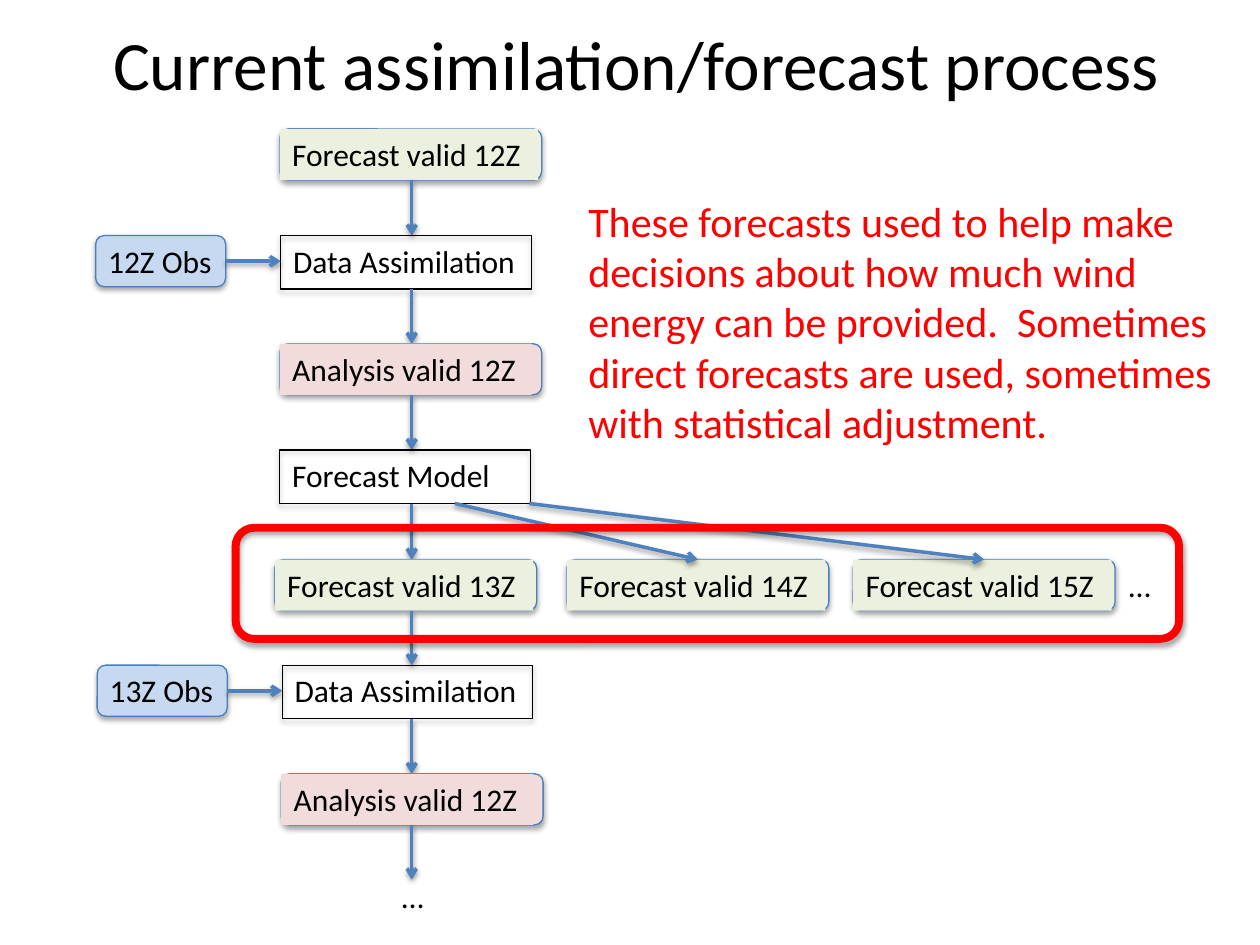
from collections import namedtuple
from dataclasses import dataclass

from lxml.etree import SubElement
from pptx import Presentation
from pptx.dml.color import RGBColor
from pptx.enum.shapes import MSO_CONNECTOR, MSO_SHAPE
from pptx.enum.text import MSO_ANCHOR, PP_ALIGN
from pptx.oxml.ns import qn
from pptx.util import Cm, Pt

# Boxes are in centimetres
Box = namedtuple("Box", "left top width height")


@dataclass(frozen=True)
class Theme:
    font: str = "Calibri"
    title_size: float = 39.6
    note_size: float = 24
    label_size: float = 18
    ink: str = "000000"
    alert: str = "FF0000"
    arrow: str = "4F81BD"
    edge: str = "4B7EBC"
    observation: str = "C6D9F1"
    forecast: str = "EBF1DE"
    analysis: str = "F2DCDB"


THEME = Theme()
ROW = 1.03
PROCESS_HEIGHT = 1.08
PROCESS_WIDTH = 5.05
CARD_WIDTH = 5.28
CARD_LABEL_WIDTHS = {THEME.forecast: 5.21, THEME.analysis: 5.08, THEME.observation: 2.62}


def lengths(box):
    return [Cm(value) for value in box]


def add_shadow(shape, opacity, distance):
    effects = shape._element.spPr.find(qn("a:effectLst"))
    if effects is None:
        effects = SubElement(shape._element.spPr, qn("a:effectLst"))
    shadow = SubElement(effects, qn("a:outerShdw"), blurRad=str(Pt(3.1)),
                        dist=str(Pt(distance)), dir="5400000", rotWithShape="0")
    color = SubElement(shadow, qn("a:srgbClr"), val=THEME.ink)
    SubElement(color, qn("a:alpha"), val=str(opacity * 1000))


def add_panel(shapes, kind, box, line=None, weight=0.75, fill=None):
    panel = shapes.add_shape(kind, *lengths(box))
    panel.shadow.inherit = False
    if fill:
        panel.fill.solid()
        panel.fill.fore_color.rgb = RGBColor.from_string(fill)
    else:
        panel.fill.background()
    if line:
        panel.line.color.rgb = RGBColor.from_string(line)
        panel.line.width = Pt(weight)
        add_shadow(panel, 35, 1.8)
    else:
        panel.line.fill.background()
    return panel


def write(shape, lines, size=THEME.label_size, color=THEME.ink,
          align=PP_ALIGN.LEFT, anchor=MSO_ANCHOR.TOP):
    frame = shape.text_frame
    frame.word_wrap = True
    frame.margin_right = 0
    frame.vertical_anchor = anchor
    frame.text = "\n".join(lines)
    for para in frame.paragraphs:
        para.alignment = align
        para.font.name = THEME.font
        para.font.size = Pt(size)
        para.font.color.rgb = RGBColor.from_string(color)


def add_label(page, box, *lines, **style):
    write(page.shapes.add_textbox(*lengths(box)), lines, **style)


def add_arrow(page, start, end):
    arrow = page.shapes.add_connector(MSO_CONNECTOR.STRAIGHT, *lengths(start + end))
    arrow.line.color.rgb = RGBColor.from_string(THEME.arrow)
    arrow.line.width = Pt(2)
    SubElement(arrow.line._get_or_add_ln(), qn("a:tailEnd"), type="arrow")
    add_shadow(arrow, 38, 1.6)


def add_card(page, box, text, fill):
    """Rounded card with a square label panel laid over it."""
    group = page.shapes.add_group_shape()
    add_panel(group.shapes, MSO_SHAPE.ROUNDED_RECTANGLE, box, THEME.edge, fill=fill)
    label_fill = None if fill == THEME.observation else fill
    label_box = box._replace(width=CARD_LABEL_WIDTHS[fill])
    write(add_panel(group.shapes, MSO_SHAPE.RECTANGLE, label_box, fill=label_fill), [text])


def add_process(page, box, text):
    add_panel(page.shapes, MSO_SHAPE.RECTANGLE, box, THEME.ink)
    add_label(page, box._replace(height=ROW), text)


def add_title(page, box):
    add_label(page, box, "Current assimilation/forecast process", size=THEME.title_size,
              align=PP_ALIGN.CENTER, anchor=MSO_ANCHOR.MIDDLE)


def add_chain(page, box):
    """Main column of steps, with observations feeding in from the left."""
    # Offset from the column's left and top, text, card fill, observation
    steps = [
        (0.1, 0, "Forecast valid 12Z", THEME.forecast, None),
        (0.12, 2.15, "Data Assimilation", None, "12Z Obs"),
        (0.1, 4.33, "Analysis valid 12Z", THEME.analysis, None),
        (0.1, 6.47, "Forecast Model", None, None),
        (0, 8.68, "Forecast valid 13Z", THEME.forecast, None),
        (0.15, 10.81, "Data Assimilation", None, "13Z Obs"),
        (0.13, 13, "Analysis valid 12Z", THEME.analysis, None),
    ]
    tops = [box.top + step[1] for step in steps] + [box.top + 15.13]
    axis = box.left + 2.76
    for (inset, _, text, fill, observation), top, next_top in zip(steps, tops, tops[1:]):
        left = box.left + inset
        if fill:
            height = ROW
            add_card(page, Box(left, top, CARD_WIDTH, height), text, fill)
        else:
            height = PROCESS_HEIGHT
            add_process(page, Box(left, top, PROCESS_WIDTH, height), text)
        if observation:
            card = Box(left - 3.73, top, 2.62, ROW)
            add_card(page, card, observation, THEME.observation)
            middle = top + ROW / 2
            add_arrow(page, (card.left + card.width, middle), (left, middle))
        add_arrow(page, (axis, top + height), (axis, next_top))
    add_label(page, Box(axis - 0.45, tops[-1] - 0.18, 0.97, ROW), "…")


def add_outputs(page, box):
    """Later forecasts, their arrows from the model, and the red frame."""
    card_top = box.top + 0.64
    model_bottom = card_top - 1.13
    outputs = [(6.68, 4.42, "Forecast valid 14Z"), (12.45, 5.92, "Forecast valid 15Z")]
    for offset, start, text in outputs:
        card = Box(box.left + offset, card_top, CARD_WIDTH, ROW)
        add_card(page, card, text, THEME.forecast)
        add_arrow(page, (box.left + start, model_bottom),
                  (card.left + CARD_WIDTH / 2, card_top))
    add_label(page, Box(card.left + CARD_WIDTH + 0.03, card_top, 0.97, ROW), "…")
    add_panel(page.shapes, MSO_SHAPE.ROUNDED_RECTANGLE, box, THEME.alert, 4.5)


def add_note(page, box):
    add_label(page, box,
              "These forecasts used to help make",
              "decisions about how much wind",
              "energy can be provided.  Sometimes",
              "direct forecasts are used, sometimes",
              "with statistical adjustment.",
              size=THEME.note_size, color=THEME.alert)


def main():
    deck = Presentation()
    deck.slide_width, deck.slide_height = Cm(25.4), Cm(19.05)
    page = deck.slides.add_slide(deck.slide_layouts[6])
    add_title(page, Box(1.27, 0.23, 22.86, 2.06))
    add_chain(page, Box(5.54, 2.6, 5.41, 16))
    add_outputs(page, Box(4.75, 10.64, 19.02, 2.24))
    add_note(page, Box(11.61, 3.81, 13.28, 5.38))
    deck.save("out.pptx")


if __name__ == "__main__":
    main()
